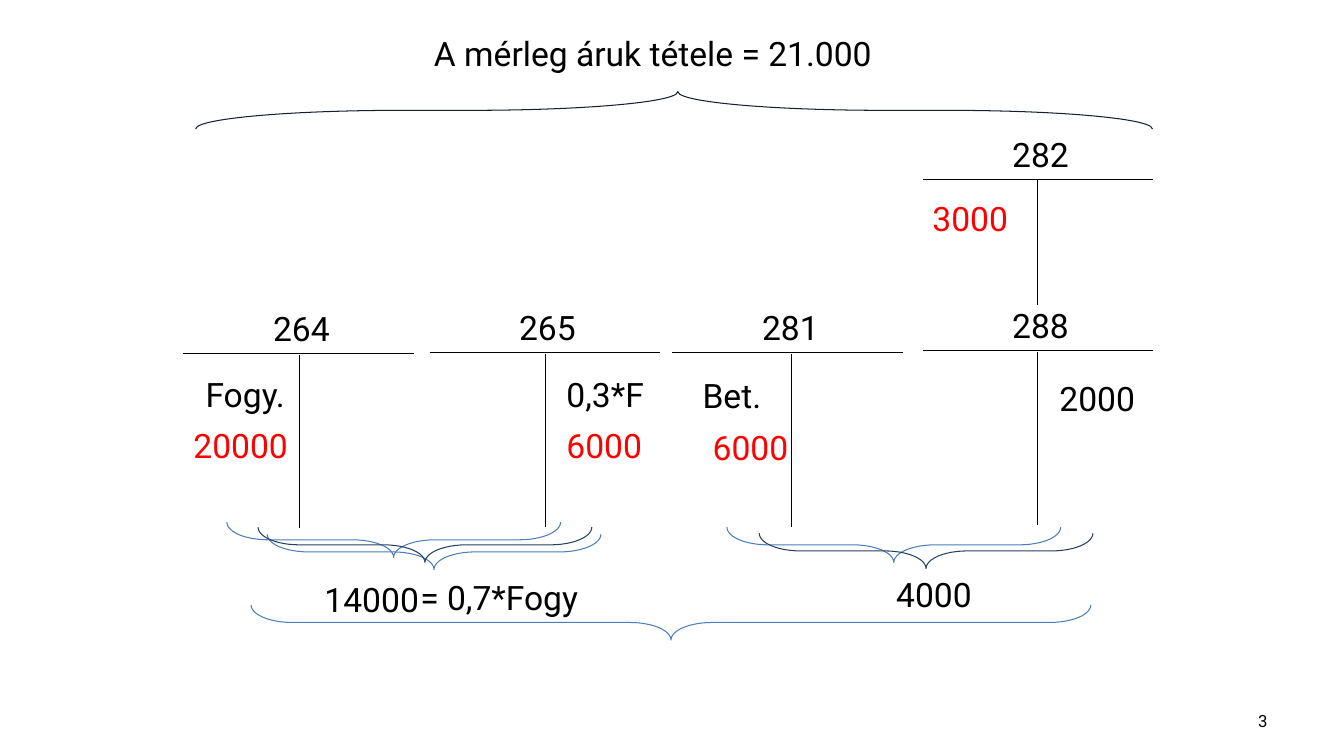
from lxml import etree
from pptx import Presentation
from pptx.dml.color import RGBColor
from pptx.enum.shapes import MSO_CONNECTOR, MSO_SHAPE
from pptx.enum.text import MSO_ANCHOR, PP_ALIGN
from pptx.oxml.ns import qn
from pptx.util import Inches, Pt

STRAIGHT = MSO_CONNECTOR.STRAIGHT
LEFT_BRACE = MSO_SHAPE.LEFT_BRACE
TOP, MIDDLE = MSO_ANCHOR.TOP, MSO_ANCHOR.MIDDLE
LEFT, CENTER, RIGHT = PP_ALIGN.LEFT, PP_ALIGN.CENTER, PP_ALIGN.RIGHT

FONT = "Roboto"
COLORS = {
    "black": "000000",
    "red": "FF0000",
    "blue": "4B7EBC",
    "navy": "254061",
    "dark": "122031",
}
LINE_WIDTH = Pt(0.75)
TEXT_HEIGHT = 0.51
ACCOUNT_WIDTH = 2.29
BRACE_DEPTH = 0.35
PAIR_WIDTH = 3.31

# Account: number, left, top, stem offset, stem length,
# entries as (text, x offset, y offset, width, colour)
ACCOUNTS = [
    ("264", 1.82, 3.51, 1.15, 1.72,
     [("Fogy.", 0.12, 0.15, 1.06, "black"), ("20000", 0, 0.66, 1.3, "red")]),
    ("265", 4.26, 3.5, 1.15, 1.72,
     [("0,3*F", 1.26, 0.16, 1.42, "black"), ("6000", 1.26, 0.67, 1.22, "red")]),
    ("281", 6.67, 3.5, 1.18, 1.72,
     [("Bet.", 0.2, 0.17, 0.94, "black"), ("6000", 0.3, 0.69, 1.19, "red")]),
    ("288", 9.15, 3.48, 1.14, 1.72, [("2000", 1.26, 0.22, 1.06, "black")]),
    ("282", 9.15, 1.78, 1.14, 1.24, [("3000", 0, 0.13, 1.14, "red")]),
]

# Downward braces: left, top, width, colour
BRACES = [
    (2.65, 5.3, PAIR_WIDTH, "blue"),
    (2.49, 6, 8.33, "blue"),
    (7.21, 5.23, PAIR_WIDTH, "blue"),
    (7.53, 5.29, PAIR_WIDTH, "navy"),
    (2.25, 5.18, PAIR_WIDTH, "blue"),
    (2.56, 5.23, PAIR_WIDTH, "navy"),
]

# Subtotals: text, left, top, width
SUBTOTALS = [
    ("4000", 8.79, 5.64, 1.34),
    ("14000", 3.12, 5.69, 1.34),
    ("= 0,7*Fogy", 4.07, 5.67, 2.06),
]


def rgb(color):
    return RGBColor.from_string(COLORS[color])


def add_text(slide, text, left, top, width, height=TEXT_HEIGHT, color="black",
             size=24, align=LEFT, anchor=TOP):
    box = slide.shapes.add_textbox(Inches(left), Inches(top), Inches(width), Inches(height))
    frame = box.text_frame
    frame.word_wrap = True
    frame.vertical_anchor = anchor
    frame.text = text
    paragraph = frame.paragraphs[0]
    paragraph.alignment = align
    font = paragraph.runs[0].font
    font.name, font.size = FONT, Pt(size)
    font.color.rgb = rgb(color)


def add_line(slide, x1, y1, x2, y2):
    line = slide.shapes.add_connector(STRAIGHT, Inches(x1), Inches(y1), Inches(x2), Inches(y2))
    line.line.color.rgb = rgb("black")
    line.line.width = LINE_WIDTH
    etree.SubElement(line._element.spPr, qn("a:effectLst"))


def add_brace(slide, left, top, width, color, depth=BRACE_DEPTH, curve=1.167,
              tip=0.5, upward=False):
    """Place a horizontal brace in the box that it fills after rotation."""
    shift = (width - depth) / 2
    brace = slide.shapes.add_shape(LEFT_BRACE, Inches(left + shift), Inches(top - shift),
                                   Inches(depth), Inches(width))
    brace.rotation = 270
    brace.adjustments[0] = curve
    brace.adjustments[1] = tip
    brace.shadow.inherit = False
    brace.fill.background()
    brace.line.color.rgb = rgb(color)
    brace.line.width = LINE_WIDTH
    if upward:
        brace._element.spPr.find(qn("a:xfrm")).set("flipH", "1")


def add_account(slide, number, left, top, stem, length, entries):
    add_line(slide, left, top, left + ACCOUNT_WIDTH, top)
    add_line(slide, left + stem, top + 0.01, left + stem, top + 0.01 + length)
    add_text(slide, number, left + 0.79, top - 0.5, 1.42)
    for text, x, y, width, color in entries:
        add_text(slide, text, left + x, top + y, width, color=color)


def add_heading(slide):
    add_text(slide, "A mérleg áruk tétele = 21.000", 2.57, 0.28, 7.81, align=CENTER)
    add_brace(slide, 1.94, 0.91, 9.49, "dark", depth=0.37, curve=5.533, tip=0.504, upward=True)


def add_totals(slide):
    for brace in BRACES:
        add_brace(slide, *brace)
    for subtotal in SUBTOTALS:
        add_text(slide, *subtotal)


def main():
    presentation = Presentation()
    presentation.slide_width = Inches(13.33)
    presentation.slide_height = Inches(7.5)
    slide = presentation.slides.add_slide(presentation.slide_layouts[6])

    add_heading(slide)
    for account in ACCOUNTS:
        add_account(slide, *account)
    add_totals(slide)

    # Slide number
    add_text(slide, "3", 9.56, 6.95, 3.11, 0.4, size=12, align=RIGHT, anchor=MIDDLE)
    presentation.save("out.pptx")


if __name__ == "__main__":
    main()
